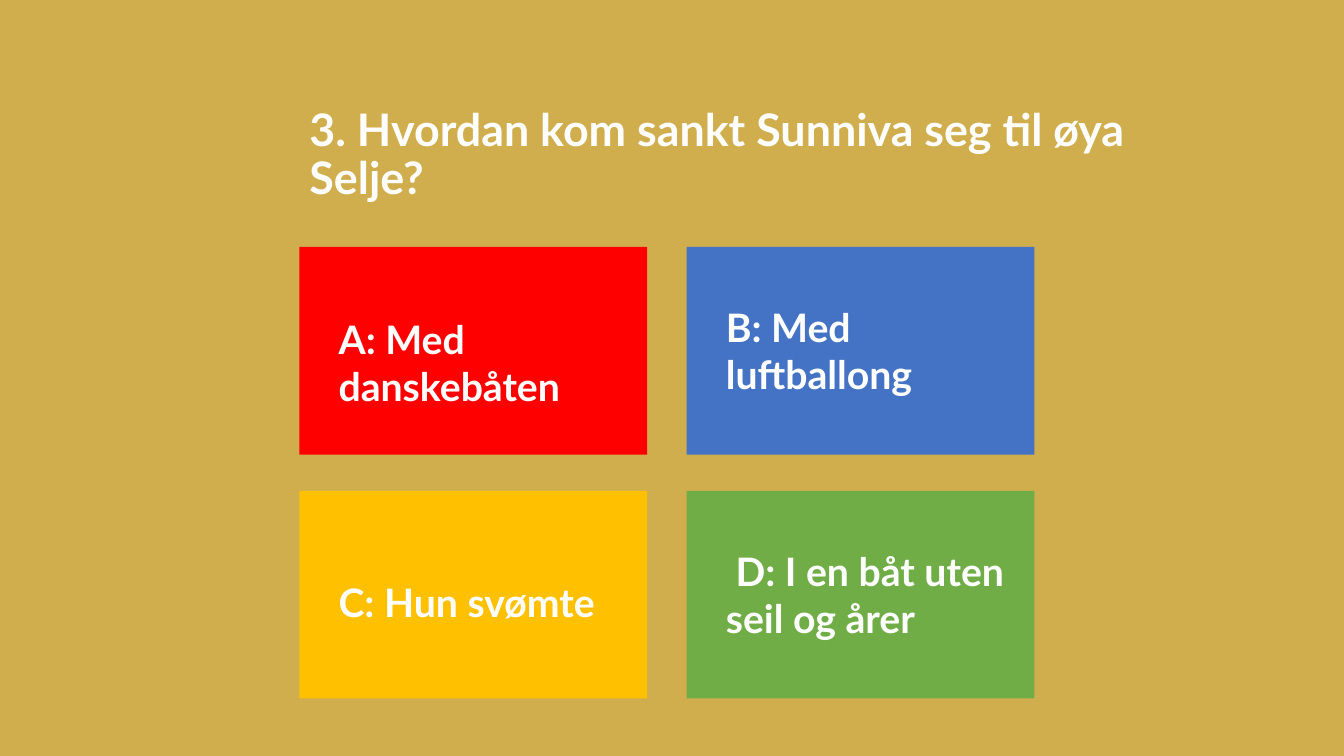
from pptx import Presentation
from pptx.dml.color import RGBColor
from pptx.enum import shapes, text
from pptx.util import Pt

GOLD = RGBColor(0xD0, 0xAE, 0x4E)
WHITE = RGBColor(0xFF, 0xFF, 0xFF)
RED = RGBColor(0xFF, 0x00, 0x00)
BLUE = RGBColor(0x44, 0x72, 0xC4)
AMBER = RGBColor(0xFF, 0xC0, 0x00)
GREEN = RGBColor(0x70, 0xAD, 0x47)

LEFT, TOP = 213.84, 176.4
WIDE, HIGH = 248.4, 148.32
STEP_X, STEP_Y = 276.6, 174.24

ANSWERS = [
    ("A: Med danskebåten", RED, (28, 30, 14, 14), 0),
    ("B: Med luftballong", BLUE, (28, 14, 14, 14), 0),
    ("C: Hun svømte", AMBER, (28, 14, 14, 3.6), 0),
    ("D: I en båt uten seil og årer", GREEN, (28, 3.6, 7.2, 3.6), 7),
]


def write(frame, words, size=28, anchor=text.MSO_ANCHOR.MIDDLE,
          inset=(7.2, 3.6, 7.2, 3.6), indent=0, space=1.0):
    """Put bold white text in a frame."""
    frame.word_wrap = True
    frame.auto_size = text.MSO_AUTO_SIZE.NONE
    frame.vertical_anchor = anchor
    (frame.margin_left, frame.margin_top,
     frame.margin_right, frame.margin_bottom) = map(Pt, inset)
    para = frame.paragraphs[0]
    para.alignment = text.PP_ALIGN.LEFT
    para.line_spacing = space
    if indent:
        props = para._p.get_or_add_pPr()
        props.set("marL", "0")
        props.set("indent", str(Pt(indent)))
    run = para.add_run()
    run.text = words
    font = run.font
    font.name, font.size, font.bold = "Lato", Pt(size), True
    font.color.rgb = WHITE


def head(slide, words):
    """Place the question in the title placeholder."""
    title = slide.shapes.title
    title.left, title.top = Pt(LEFT), Pt(68.4)
    title.width, title.height = Pt(625.7), Pt(81.4)
    write(title.text_frame, words, size=32,
          anchor=text.MSO_ANCHOR.BOTTOM, space=0.9)


def card(slide, place, words, fill, inset, indent):
    """Draw one answer card at its place in the two-column grid."""
    row, col = divmod(place, 2)
    box = slide.shapes.add_shape(
        shapes.MSO_SHAPE.RECTANGLE, Pt(LEFT + col * STEP_X),
        Pt(TOP + row * STEP_Y), Pt(WIDE), Pt(HIGH))
    box.shadow.inherit = False
    box.fill.solid()
    box.fill.fore_color.rgb = fill
    box.line.fill.background()
    write(box.text_frame, words, inset=inset, indent=indent)


def main():
    """Build the quiz slide."""
    deck = Presentation()
    deck.slide_width, deck.slide_height = Pt(960), Pt(540)
    slide = deck.slides.add_slide(deck.slide_layouts[5])
    slide.background.fill.solid()
    slide.background.fill.fore_color.rgb = GOLD
    head(slide, "3. Hvordan kom sankt Sunniva seg til øya Selje?")
    for place, answer in enumerate(ANSWERS):
        card(slide, place, *answer)
    deck.save("out.pptx")


if __name__ == "__main__":
    main()
